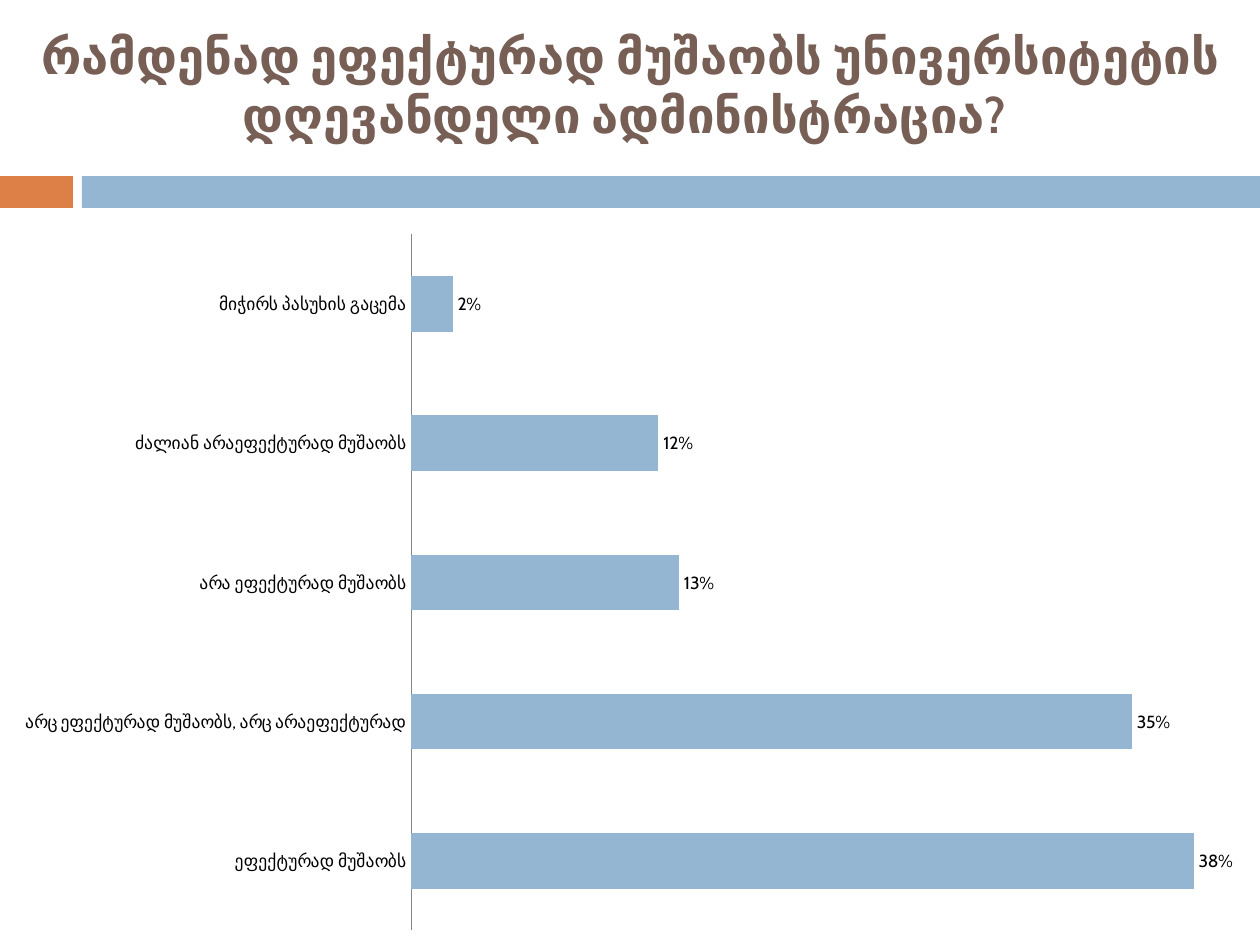
from pptx import Presentation
from pptx.chart.data import CategoryChartData
from pptx.dml.color import RGBColor
from pptx.enum.chart import XL_CHART_TYPE as ChartType
from pptx.enum.chart import XL_LABEL_POSITION as LabelPosition
from pptx.enum.chart import XL_TICK_MARK as TickMark
from pptx.enum.shapes import MSO_SHAPE as Shape
from pptx.enum.text import MSO_ANCHOR as Anchor
from pptx.enum.text import PP_ALIGN as Align
from pptx.util import Emu, Pt

PX_PER_INCH = 126
WIDTH, HEIGHT = 1260, 945
FONT = "Cabin"
COLORS = {
    "title": "775F55",
    "accent": "DD8047",
    "bar": "94B6D2",
    "axis": "868686",
    "text": "000000",
}
TITLE = "რამდენად ეფექტურად მუშაობს უნივერსიტეტის დღევანდელი ადმინისტრაცია? "
ANSWERS = {
    "ეფექტურად მუშაობს": 0.38,
    "არც ეფექტურად მუშაობს, არც არაეფექტურად": 0.35,
    "არა ეფექტურად მუშაობს": 0.13,
    "ძალიან არაეფექტურად მუშაობს": 0.12,
    "მიჭირს პასუხის გაცემა": 0.02,
}


def px(length):
    return Emu(round(length * 914400 / PX_PER_INCH))


def color(name):
    return RGBColor.from_string(COLORS[name])


def format_font(font, size, color_name, bold=False):
    font.name = FONT
    font.size = Pt(size)
    font.bold = bold
    font.color.rgb = color(color_name)


def add_band(page, left, width, fill):
    band = page.shapes.add_shape(Shape.RECTANGLE, px(left), px(176), px(width), px(32))
    band.shadow.inherit = False
    band.fill.solid()
    band.fill.fore_color.rgb = color(fill)
    band.line.fill.background()


def add_text(page, text, left, top, width, height, **font_format):
    box = page.shapes.add_textbox(px(left), px(top), px(width), px(height))
    frame = box.text_frame
    frame.word_wrap = True
    frame.vertical_anchor = Anchor.MIDDLE
    para = frame.paragraphs[0]
    para.alignment = Align.CENTER
    span = para.add_run()
    span.text = text
    format_font(span.font, **font_format)


def add_bar_chart(page, answers, left, top, width, height):
    data = CategoryChartData(number_format="0%")
    data.categories = list(answers)
    data.add_series("Series 1", list(answers.values()))
    chart = page.shapes.add_chart(
        ChartType.BAR_CLUSTERED, px(left), px(top), px(width), px(height), data
    ).chart
    chart.has_legend = False
    chart.has_title = False
    format_font(chart.font, 10, "text")

    categories = chart.category_axis
    categories.major_tick_mark = TickMark.NONE
    categories.format.line.color.rgb = color("axis")
    categories.format.line.width = Pt(0.75)

    values = chart.value_axis
    values.visible = False
    values.has_major_gridlines = False
    values.minimum_scale = 0
    values.maximum_scale = 0.4

    plot = chart.plots[0]
    plot.vary_by_categories = False
    plot.gap_width = 150
    plot.overlap = -25
    fill = plot.series[0].format.fill
    fill.solid()
    fill.fore_color.rgb = color("bar")

    plot.has_data_labels = True
    labels = plot.data_labels
    labels.show_value = True
    labels.number_format = "0%"
    labels.number_format_is_linked = False
    labels.position = LabelPosition.OUTSIDE_END
    format_font(labels.font, 10, "text")


def main():
    deck = Presentation()
    deck.slide_width, deck.slide_height = px(WIDTH), px(HEIGHT)
    page = deck.slides.add_slide(deck.slide_layouts[6])
    add_band(page, 0, 73, "accent")
    add_band(page, 82, WIDTH - 82, "bar")
    add_text(page, TITLE, 0, 0, WIDTH, 168, size=28, color_name="title", bold=True)
    add_bar_chart(page, ANSWERS, 0, 220, WIDTH, HEIGHT - 220)
    deck.save("out.pptx")


if __name__ == "__main__":
    main()
